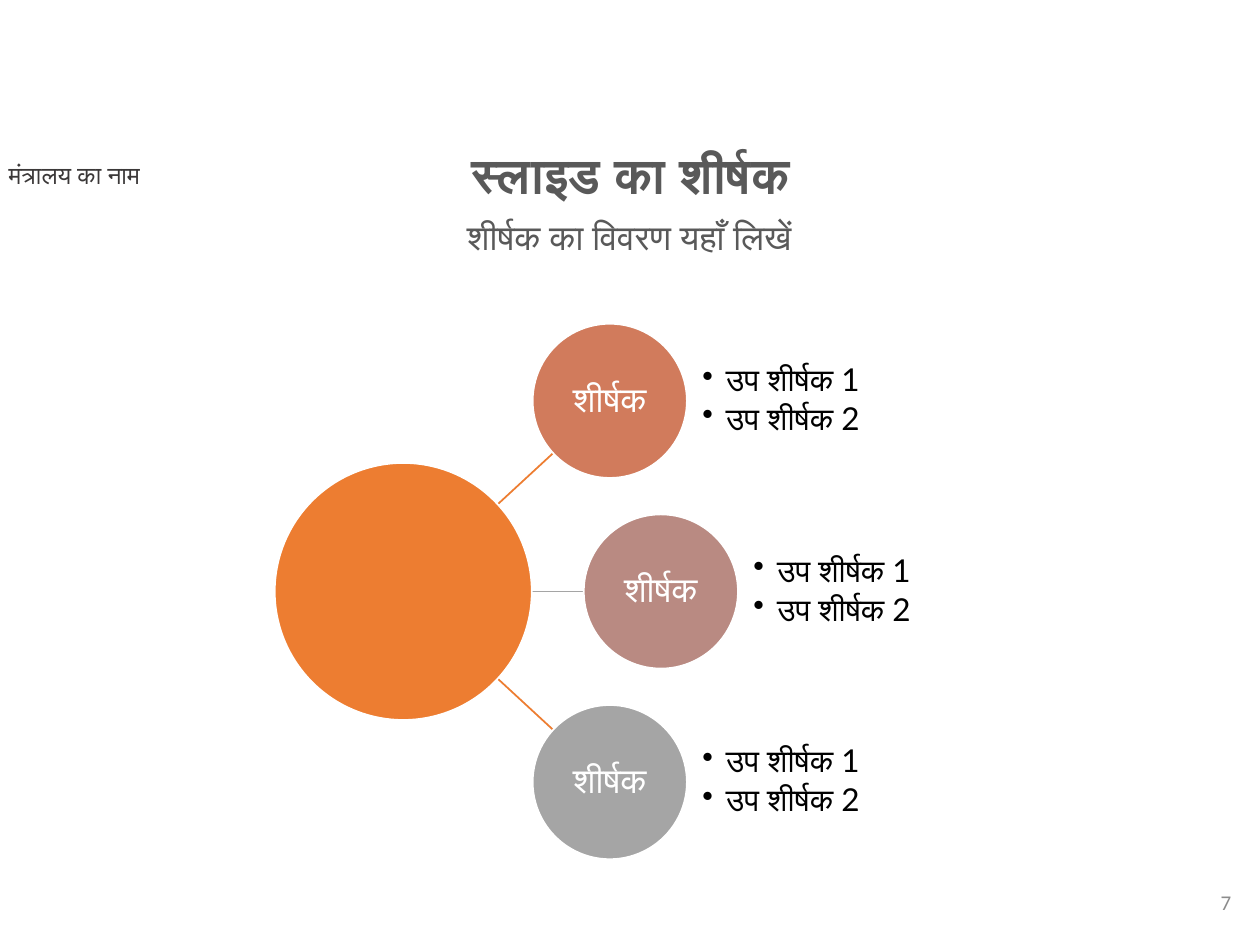
from dataclasses import dataclass
from math import hypot

from lxml.etree import SubElement
from pptx import Presentation
from pptx.dml.color import RGBColor
from pptx.enum.shapes import MSO_CONNECTOR as Connector, MSO_SHAPE as Shape
from pptx.enum.text import MSO_ANCHOR as Anchor, MSO_AUTO_SIZE as AutoSize, PP_ALIGN as Align
from pptx.oxml.ns import qn
from pptx.util import Pt


@dataclass(frozen=True)
class Theme:
    """Colours, fonts and type sizes of the slide."""
    heading_font: str = "Calibri"
    diagram_font: str = "Lato"
    heading: str = "595959"
    ministry: str = "3B3838"
    number: str = "8C8C8C"
    accent: str = "ED7D31"
    gray: str = "A5A5A5"
    white: str = "FFFFFF"
    black: str = "000000"
    topics: tuple = ("D17B5C", "B98A82", "A5A5A5")
    title_size: int = 28
    label_size: int = 20
    bullet_size: int = 18
    ministry_size: int = 14
    number_size: int = 12


THEME = Theme()
SUBTOPICS = ("उप शीर्षक 1", "उप शीर्षक 2")


def style(paragraph, font, size, color, align=Align.LEFT, bold=False, spacing=1.0, after=0):
    """Format one paragraph."""
    paragraph.alignment = align
    paragraph.line_spacing = spacing
    paragraph.space_before = Pt(0)
    paragraph.space_after = Pt(after)
    paragraph.font.name = font
    paragraph.font.size = Pt(size)
    paragraph.font.bold = bold
    paragraph.font.color.rgb = RGBColor.from_string(color)


def set_bullet(paragraph, bullet=None, indent=0):
    """Give a paragraph a hanging bullet, or none."""
    properties = paragraph._p.get_or_add_pPr()
    properties.set("marL", str(Pt(indent)))
    properties.set("indent", str(-Pt(indent)))
    if bullet:
        SubElement(properties, qn("a:buChar")).set("char", bullet)
    else:
        SubElement(properties, qn("a:buNone"))


def set_insets(frame, inset):
    """Use the same inset on all four sides."""
    frame.margin_left = frame.margin_right = Pt(inset)
    frame.margin_top = frame.margin_bottom = Pt(inset)


def add_text(slide, box, text, anchor, **look):
    """Add a one-line text box."""
    frame = slide.shapes.add_textbox(*map(Pt, box)).text_frame
    frame.word_wrap = True
    frame.vertical_anchor = anchor
    frame.text = text
    style(frame.paragraphs[0], THEME.heading_font, **look)


def fill_heading(placeholder, box, text, size, bold=False):
    """Move a heading placeholder into its box and write its text."""
    placeholder.left, placeholder.top, placeholder.width, placeholder.height = map(Pt, box)
    frame = placeholder.text_frame
    frame.text = text
    frame.auto_size = AutoSize.NONE
    frame.vertical_anchor = Anchor.TOP
    paragraph = frame.paragraphs[0]
    set_bullet(paragraph)
    style(paragraph, THEME.heading_font, size, THEME.heading, Align.CENTER, bold, 0.9)


def add_circle(slide, center, radius, color):
    """Add a filled circle with a white outline."""
    x, y = center
    circle = slide.shapes.add_shape(
        Shape.OVAL, Pt(x - radius), Pt(y - radius), Pt(2 * radius), Pt(2 * radius))
    circle.shadow.inherit = False
    circle.fill.solid()
    circle.fill.fore_color.rgb = RGBColor.from_string(color)
    circle.line.color.rgb = RGBColor.from_string(THEME.white)
    circle.line.width = Pt(1)
    return circle


def add_spoke(slide, hub, hub_radius, topic, topic_radius, color, width):
    """Draw a line between the edges of two circles."""
    dx, dy = topic[0] - hub[0], topic[1] - hub[1]
    distance = hypot(dx, dy)
    start, end = hub_radius / distance, 1 - topic_radius / distance
    spoke = slide.shapes.add_connector(
        Connector.STRAIGHT,
        Pt(hub[0] + start * dx), Pt(hub[1] + start * dy),
        Pt(hub[0] + end * dx), Pt(hub[1] + end * dy))
    spoke.line.color.rgb = RGBColor.from_string(color)
    spoke.line.width = Pt(width)
    SubElement(spoke._element.spPr, qn("a:effectLst"))


def add_topic(slide, center, radius, color):
    """Add a labelled circle with its subtopics to the right."""
    label = add_circle(slide, center, radius, color).text_frame
    set_insets(label, 0.7)
    label.word_wrap = True
    label.vertical_anchor = Anchor.MIDDLE
    label.text = "शीर्षक"
    style(label.paragraphs[0], THEME.diagram_font, THEME.label_size, THEME.white,
          Align.CENTER, spacing=0.9, after=7)

    x, y = center
    subtopics = slide.shapes.add_textbox(
        Pt(x + 1.2 * radius), Pt(y - radius), Pt(3 * radius), Pt(2 * radius)).text_frame
    set_insets(subtopics, 0)
    subtopics.word_wrap = True
    subtopics.vertical_anchor = Anchor.MIDDLE
    subtopics.text = "\n".join(SUBTOPICS)
    for paragraph in subtopics.paragraphs:
        set_bullet(paragraph, "•", 13.5)
        style(paragraph, THEME.diagram_font, THEME.bullet_size, THEME.black,
              spacing=0.9, after=2.7)


def add_radial_diagram(slide, box):
    """Place a hub and three topics fanned out to its right."""
    left, top, width, height = box
    hub_radius, topic_radius = 0.24 * height, 0.144 * height
    hub = (left + hub_radius, top + height / 2)
    pitch = height / 2 - topic_radius
    offsets = (118, 147.2, 118)
    centers = [(hub[0] + offset, hub[1] + row * pitch)
               for row, offset in zip((-1, 0, 1), offsets)]
    spoke_looks = ((THEME.accent, 1), (THEME.gray, 0.5), (THEME.accent, 1))
    for center, look in zip(centers, spoke_looks):
        add_spoke(slide, hub, hub_radius, center, topic_radius, *look)
    add_circle(slide, hub, hub_radius, THEME.accent)
    for center, color in zip(centers, THEME.topics):
        add_topic(slide, center, topic_radius, color)


def main():
    """Build and save the slide."""
    deck = Presentation()
    deck.slide_width, deck.slide_height = Pt(720), Pt(540)
    slide = deck.slides.add_slide(deck.slide_layouts[1])
    title, description = slide.placeholders
    fill_heading(title, (134, 82.8, 452.8, 33.8), "स्लाइड का शीर्षक",
                 THEME.title_size, bold=True)
    fill_heading(description, (105.1, 122.4, 509, 45.4), "शीर्षक का विवरण यहाँ लिखें",
                 THEME.label_size)
    add_text(slide, (-2.2, 87.8, 157, 24.5), "मंत्रालय का नाम", Anchor.TOP,
             size=THEME.ministry_size, color=THEME.ministry)
    add_radial_diagram(slide, (157, 185, 406, 306))
    add_text(slide, (548.6, 501.1, 162, 28.8), "7", Anchor.MIDDLE,
             size=THEME.number_size, color=THEME.number, align=Align.RIGHT)
    deck.save("out.pptx")


if __name__ == "__main__":
    main()
